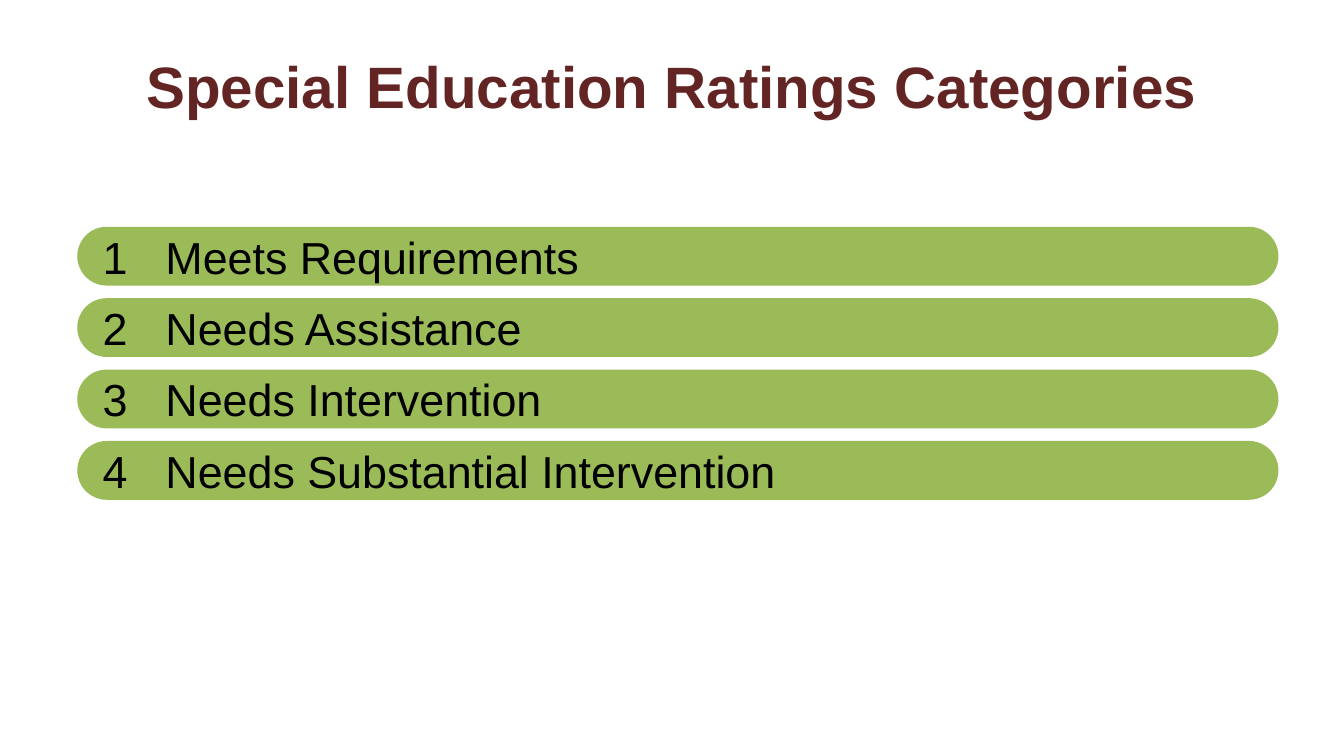
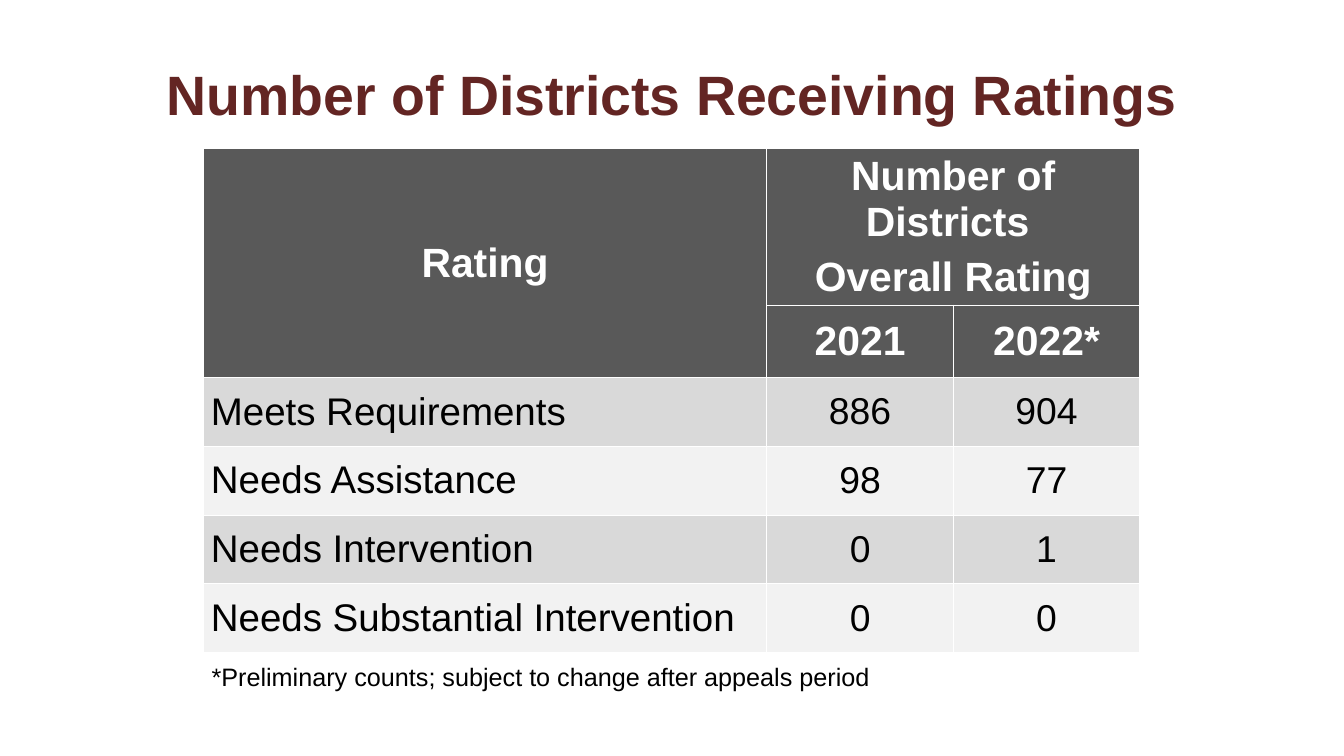
from lxml.etree import SubElement
from pptx import Presentation
from pptx.dml.color import RGBColor
from pptx.enum.shapes import MSO_SHAPE
from pptx.enum.text import MSO_ANCHOR, PP_ALIGN
from pptx.oxml.ns import qn
from pptx.util import Inches, Pt

MAROON = RGBColor(0x63, 0x25, 0x23)
GREEN = RGBColor(0x9B, 0xBB, 0x59)
DARK = RGBColor(0x59, 0x59, 0x59)
MID = RGBColor(0xD9, 0xD9, 0xD9)
LIGHT = RGBColor(0xF2, 0xF2, 0xF2)
WHITE = RGBColor(0xFF, 0xFF, 0xFF)
BLACK = RGBColor(0, 0, 0)
FONT = "Arial"

RATINGS = [
    ("Meets Requirements", "886", "904"),
    ("Needs Assistance", "98", "77"),
    ("Needs Intervention", "0", "1"),
    ("Needs Substantial Intervention", "0", "0"),
]


def write(tf, text, size, color=BLACK, bold=False, align=PP_ALIGN.LEFT,
          before=0, after=0):
    for i, line in enumerate(text.split("\n")):
        p = tf.add_paragraph() if i else tf.paragraphs[0]
        p.alignment = align
        p.space_before = Pt(before if i else 0)
        p.space_after = Pt(after)
        r = p.add_run()
        r.text = line
        r.font.name = FONT
        r.font.size = Pt(size)
        r.font.bold = bold
        r.font.color.rgb = color


def set_margins(item, x, y):
    item.margin_left = item.margin_right = Inches(x)
    item.margin_top = item.margin_bottom = Inches(y)


def add_text(s, x, y, w, h, text, size, inset=(0, 0), **fmt):
    tf = s.shapes.add_textbox(Inches(x), Inches(y), Inches(w), Inches(h)).text_frame
    tf.word_wrap = True
    set_margins(tf, *inset)
    write(tf, text, size, **fmt)


def add_title(s, y, h, text, size):
    add_text(s, 0.8, y, 14.4, h, text, size, color=MAROON, bold=True,
             align=PP_ALIGN.CENTER)


def add_shape(s, kind, x, y, w, h):
    sp = s.shapes.add_shape(kind, Inches(x), Inches(y), Inches(w), Inches(h))
    sp.shadow.inherit = False
    sp.fill.solid()
    sp.fill.fore_color.rgb = GREEN
    sp.line.fill.background()
    return sp


def add_rating_bar(s, number, y, label):
    bar = add_shape(s, MSO_SHAPE.ROUNDED_RECTANGLE, 0.92, y, 14.3, 0.7)
    bar.adjustments[0] = 0.5
    badge = add_shape(s, MSO_SHAPE.OVAL, 1.03, y + 0.01, 0.68, 0.68)
    tf = badge.text_frame
    tf.vertical_anchor = MSO_ANCHOR.MIDDLE
    set_margins(tf, 0, 0)
    write(tf, str(number), 38.5, align=PP_ALIGN.CENTER)
    add_text(s, 1.97, y + 0.03, 8, 0.6, label, 38.4)


def add_borders(cell):
    tcPr = cell._tc.get_or_add_tcPr()
    for side in ("a:lnL", "a:lnR", "a:lnT", "a:lnB"):
        ln = SubElement(tcPr, qn(side), w=str(Pt(1)))
        fill = SubElement(ln, qn("a:solidFill"))
        SubElement(fill, qn("a:srgbClr"), val=str(WHITE))


def fill_cell(cell, text, size, fill, **fmt):
    add_borders(cell)
    cell.fill.solid()
    cell.fill.fore_color.rgb = fill
    cell.vertical_anchor = MSO_ANCHOR.MIDDLE
    set_margins(cell, 0.09, 0)
    write(cell.text_frame, text, size, **fmt)


def add_ratings_table(s):
    widths = [6.71, 2.22, 2.22]
    heights = [1.77, 0.86] + [0.82] * len(RATINGS)
    table = s.shapes.add_table(len(heights), len(widths), Inches(2.42), Inches(1.77),
                               Inches(sum(widths)), Inches(sum(heights))).table
    table.first_row = table.horz_banding = False
    for col, width in zip(table.columns, widths):
        col.width = Inches(width)
    for row, height in zip(table.rows, heights):
        row.height = Inches(height)

    table.cell(0, 0).merge(table.cell(1, 0))
    table.cell(0, 1).merge(table.cell(0, 2))
    header = [["Rating", "Number of Districts \nOverall Rating", ""],
              ["", "2021", "2022*"]]
    for i, texts in enumerate(header):
        for j, text in enumerate(texts):
            fill_cell(table.cell(i, j), text, 35, DARK, color=WHITE, bold=True,
                      align=PP_ALIGN.CENTER, before=2, after=6 if j else 2)

    for i, (label, *counts) in enumerate(RATINGS):
        fill = LIGHT if i % 2 else MID
        fill_cell(table.cell(i + 2, 0), label, 33, fill)
        for j, count in enumerate(counts, 1):
            fill_cell(table.cell(i + 2, j), count, 32, fill, align=PP_ALIGN.CENTER)


def build_categories(s):
    add_title(s, 0.6, 0.84, "Special Education Ratings Categories", 50)
    for i, (label, *_) in enumerate(RATINGS):
        add_rating_bar(s, i + 1, 2.7 + 0.85 * i, label)


def build_counts(s):
    add_title(s, 0.72, 0.8, "Number of Districts Receiving Ratings", 47.5)
    add_ratings_table(s)
    add_text(s, 2.42, 7.82, 10.89, 0.46,
             "*Preliminary counts; subject to change after appeals period", 21.6,
             inset=(0.1, 0.05))


def main():
    prs = Presentation()
    prs.slide_width = Inches(16)
    prs.slide_height = Inches(9)
    for build in (build_categories, build_counts):
        build(prs.slides.add_slide(prs.slide_layouts[6]))
    prs.save("out.pptx")


if __name__ == "__main__":
    main()
